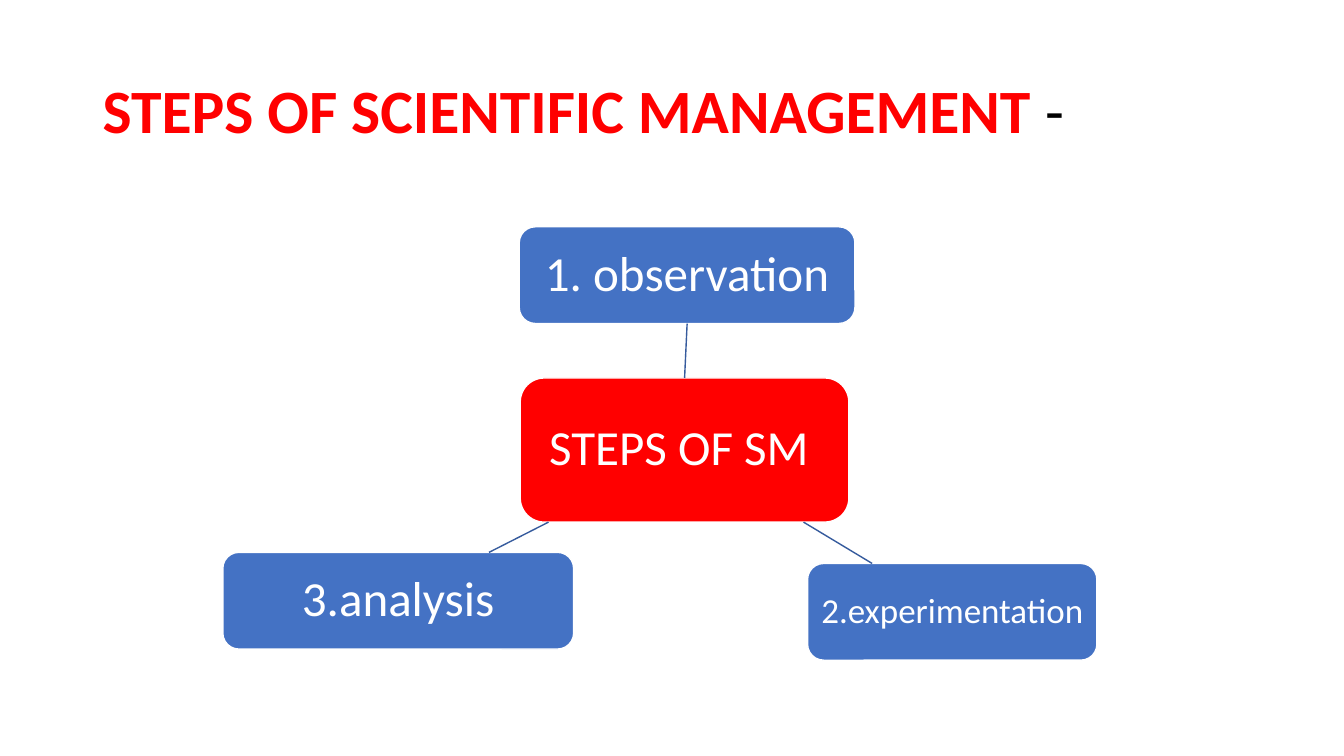
import dataclasses
import typing

import lxml.etree
import pptx
import pptx.dml.color
import pptx.enum.shapes
import pptx.enum.text
import pptx.oxml.ns
import pptx.util

PX = 9144  # EMU per px, 100 px to the inch


@dataclasses.dataclass(frozen=True)
class Theme:
    font: str = "Calibri"
    red: str = "FF0000"
    blue: str = "4472C4"
    link: str = "365B9D"
    white: str = "FFFFFF"
    black: str = "000000"
    title_size: int = 44
    label_size: int = 35
    small_size: int = 25
    line_width: int = 1
    line_spacing: float = 0.9


THEME = Theme()


@dataclasses.dataclass(frozen=True)
class Box:
    label: str
    left: int
    top: int
    width: int
    height: int
    fill: str = THEME.blue
    size: int = THEME.label_size
    inset: int = 10


@dataclasses.dataclass(frozen=True)
class Link:
    start: tuple[int, int]
    end: tuple[int, int]


HUB = Box("STEPS OF SM ", 516, 375, 326, 143, fill=THEME.red)
OBSERVATION = Box("1. observation", 515, 225, 333, 96)
EXPERIMENTATION = Box("2.experimentation", 801, 559, 287, 96,
                      size=THEME.small_size, inset=5)
ANALYSIS = Box("3.analysis", 221, 548, 348, 96)

OBSERVATION_LINK = Link((680, 375), (681, 321))
LOWER_LINKS = [Link((797, 518), (865, 559)), Link((544, 518), (485, 548))]


def emu(*lengths: int) -> list[int]:
    return [length * PX for length in lengths]


def rgb(colour: str) -> pptx.dml.color.RGBColor:
    return pptx.dml.color.RGBColor.from_string(colour)


def apply(target: typing.Any, formats: dict[str, typing.Any]) -> None:
    for attribute, value in formats.items():
        setattr(target, attribute, value)


def add_run(paragraph: typing.Any, text: str, size: int, colour: str,
            bold: bool = False) -> None:
    run = paragraph.add_run()
    run.text = text
    apply(run.font, {"name": THEME.font, "size": pptx.util.Pt(size), "bold": bold})
    run.font.color.rgb = rgb(colour)


def style_line(line: typing.Any, colour: str) -> None:
    line.color.rgb = rgb(colour)
    line.width = pptx.util.Pt(THEME.line_width)


def draw_title(slide: typing.Any) -> None:
    frame = slide.shapes.add_textbox(*emu(92, 40, 1150, 145)).text_frame
    apply(frame, {"word_wrap": True,
                  "vertical_anchor": pptx.enum.text.MSO_ANCHOR.MIDDLE})
    heading = frame.paragraphs[0]
    heading.line_spacing = THEME.line_spacing
    add_run(heading, "STEPS OF SCIENTIFIC MANAGEMENT ", THEME.title_size,
            THEME.red, bold=True)
    add_run(heading, "-", THEME.title_size, THEME.black)


def draw_box(slide: typing.Any, box: Box) -> typing.Any:
    shape = slide.shapes.add_shape(
        pptx.enum.shapes.MSO_SHAPE.ROUNDED_RECTANGLE,
        *emu(box.left, box.top, box.width, box.height))
    shape.shadow.inherit = False
    shape.fill.solid()
    shape.fill.fore_color.rgb = rgb(box.fill)
    style_line(shape.line, THEME.white)
    inset = box.inset * PX
    apply(shape.text_frame, {
        "word_wrap": True,
        "vertical_anchor": pptx.enum.text.MSO_ANCHOR.MIDDLE,
        "margin_left": inset, "margin_right": inset,
        "margin_top": inset, "margin_bottom": inset,
    })
    paragraph = shape.text_frame.paragraphs[0]
    apply(paragraph, {"alignment": pptx.enum.text.PP_ALIGN.CENTER,
                      "line_spacing": THEME.line_spacing})
    add_run(paragraph, box.label, box.size, THEME.white)
    return shape


def draw_link(slide: typing.Any, link: Link) -> typing.Any:
    connector = slide.shapes.add_connector(
        pptx.enum.shapes.MSO_CONNECTOR.STRAIGHT, *emu(*link.start, *link.end))
    style_line(connector.line, THEME.link)
    lxml.etree.SubElement(connector._element.spPr,
                          pptx.oxml.ns.qn("a:effectLst"))
    return connector


def main() -> None:
    deck = pptx.Presentation()
    apply(deck, {"slide_width": 1333 * PX, "slide_height": 750 * PX})
    slide = deck.slides.add_slide(deck.slide_layouts[6])

    # Heading
    draw_title(slide)

    # Hub and its three steps
    hub = draw_box(slide, HUB)
    observation = draw_box(slide, OBSERVATION)
    for step in (EXPERIMENTATION, ANALYSIS):
        draw_box(slide, step)

    # Links from the hub to the steps
    observation_link = draw_link(slide, OBSERVATION_LINK)
    observation_link.begin_connect(hub, 0)
    observation_link.end_connect(observation, 2)
    for link in LOWER_LINKS:
        draw_link(slide, link)

    deck.save("out.pptx")


if __name__ == "__main__":
    main()
